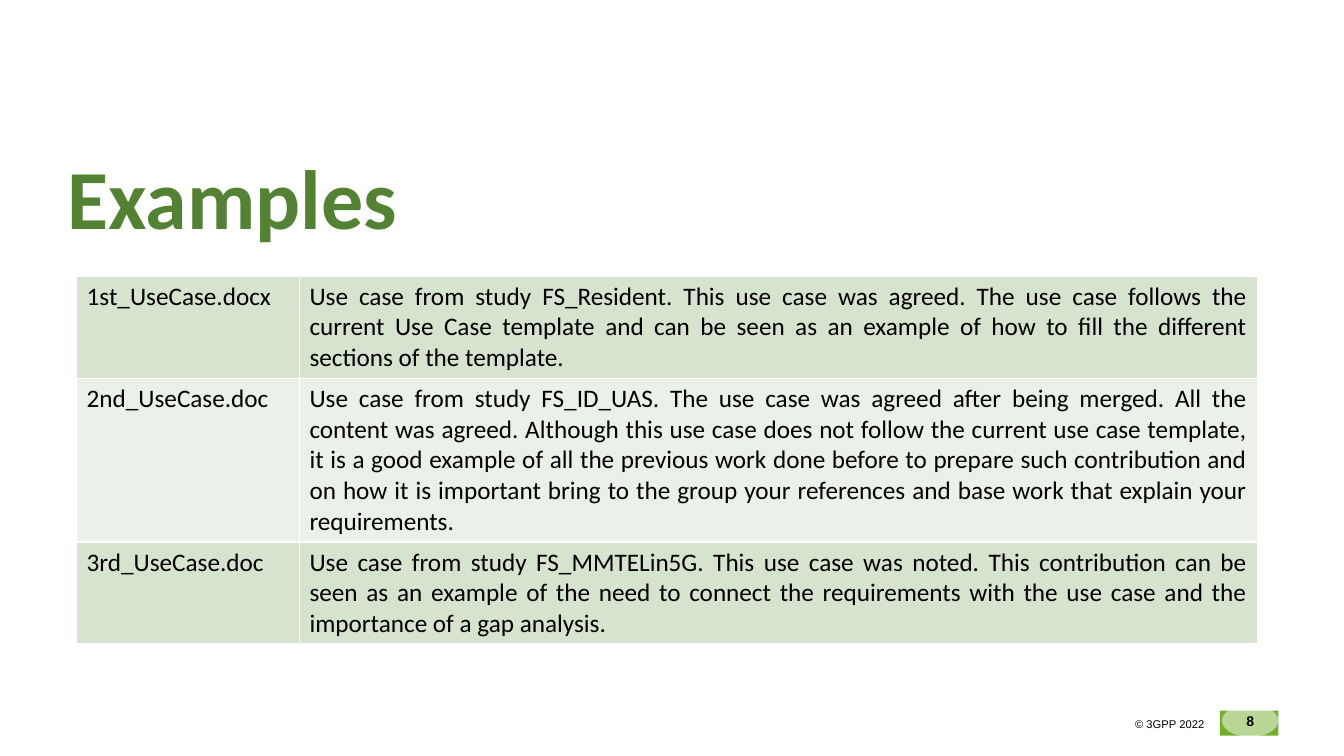
import pptx
import pptx.util
import pptx.dml.color
import pptx.enum.shapes
import pptx.enum.text
import lxml.etree
import pptx.oxml.ns

RGB = pptx.dml.color.RGBColor
BLACK = RGB(0x00, 0x00, 0x00)
WHITE = RGB(0xFF, 0xFF, 0xFF)
GREEN = RGB(0x54, 0x82, 0x35)
LIME = RGB(0x72, 0xAF, 0x2F)
BANDS = [RGB(0xD5, 0xE3, 0xCF), RGB(0xEB, 0xF1, 0xE9)]
KIND = pptx.enum.shapes.MSO_SHAPE
ALIGN = pptx.enum.text.PP_ALIGN
ANCHOR = pptx.enum.text.MSO_ANCHOR
qn = pptx.oxml.ns.qn

deck = pptx.Presentation()
deck.slide_width = pptx.util.Inches(13.33)
deck.slide_height = pptx.util.Inches(7.5)
slide = deck.slides.add_slide(deck.slide_layouts[6])


def area(left, top, width, height):
    """Turn percentages of the slide's size into lengths."""
    wide, high = deck.slide_width / 100, deck.slide_height / 100
    return int(left * wide), int(top * high), int(width * wide), int(height * high)


def write(frame, text, font, size, color=BLACK, bold=False, align=ALIGN.LEFT):
    """Add one styled run to the first paragraph and return the paragraph."""
    para = frame.paragraphs[0]
    para.alignment = align
    run = para.add_run()
    run.text = text
    run.font.name = font
    run.font.size = pptx.util.Pt(size)
    run.font.bold = bold
    run.font.color.rgb = color
    return para


# Footer: page number badge and copyright
badge = slide.shapes.add_shape(KIND.RECTANGLE, *area(90.77, 94, 4.35, 3.33))
oval = slide.shapes.add_shape(KIND.OVAL, *area(90.92, 93.2, 4.2, 4.27))
for shape, color in (badge, LIME), (oval, WHITE):
    shape.shadow.inherit = False
    shape.fill.solid()
    shape.fill.fore_color.rgb = color
    shape.line.fill.background()
tint = oval.fill._xPr.find(qn("a:solidFill"))[0]
lxml.etree.SubElement(tint, qn("a:alpha"), val="50000")
oval.text_frame.vertical_anchor = ANCHOR.MIDDLE
write(oval.text_frame, "8", "Arial", 10, bold=True, align=ALIGN.CENTER)

note = slide.shapes.add_textbox(*area(83.72, 94.27, 6.75, 3.2))
note.text_frame.word_wrap = False
write(note.text_frame, "© 3GPP 2022", "Arial", 8)

# Title
title = slide.shapes.add_textbox(*area(4.28, 19.6, 86.27, 13.87))
title.text_frame.word_wrap = True
title.text_frame.vertical_anchor = ANCHOR.BOTTOM
head = write(title.text_frame, "Examples", "Calibri", 60, GREEN, True)
head.line_spacing = 0.9

# Table of use cases: file, remark, row height in percent
cases = [
    ("1st_UseCase.docx",
     "Use case from study FS_Resident. This use case was agreed. The use case "
     "follows the current Use Case template and can be seen as an example of "
     "how to fill the different sections of the template.", 13.5),
    ("2nd_UseCase.doc",
     "Use case from study FS_ID_UAS. The use case was agreed after being "
     "merged. All the content was agreed. Although this use case does not "
     "follow the current use case template, it is a good example of all the "
     "previous work done before to prepare such contribution and on how it is "
     "important bring to the group your references and base work that explain "
     "your requirements.", 21.67),
    ("3rd_UseCase.doc",
     "Use case from study FS_MMTELin5G. This use case was noted. This "
     "contribution can be seen as an example of the need to connect the "
     "requirements with the use case and the importance of a gap analysis.",
     13.5),
]
total = sum(case[2] for case in cases)
table = slide.shapes.add_table(
    len(cases), 2, *area(5.7, 36.53, 87.85, total)).table
table.first_row = False
for col, share in enumerate((16.58, 71.27)):
    table.columns[col].width = int(deck.slide_width * share / 100)

for row, (name, remark, share) in enumerate(cases):
    table.rows[row].height = int(deck.slide_height * share / 100)
    for col, (text, align) in enumerate(
            ((name, ALIGN.LEFT), (remark, ALIGN.JUSTIFY))):
        cell = table.cell(row, col)
        write(cell.text_frame, text, "Calibri", 18, align=align)
        props = cell._tc.get_or_add_tcPr()
        for side in ("lnL", "lnR", "lnT", "lnB"):
            edge = lxml.etree.SubElement(props, qn("a:" + side), w="12700")
            paint = lxml.etree.SubElement(edge, qn("a:solidFill"))
            lxml.etree.SubElement(paint, qn("a:srgbClr"), val=str(WHITE))
        cell.fill.solid()
        cell.fill.fore_color.rgb = BANDS[row % 2]

deck.save("out.pptx")
